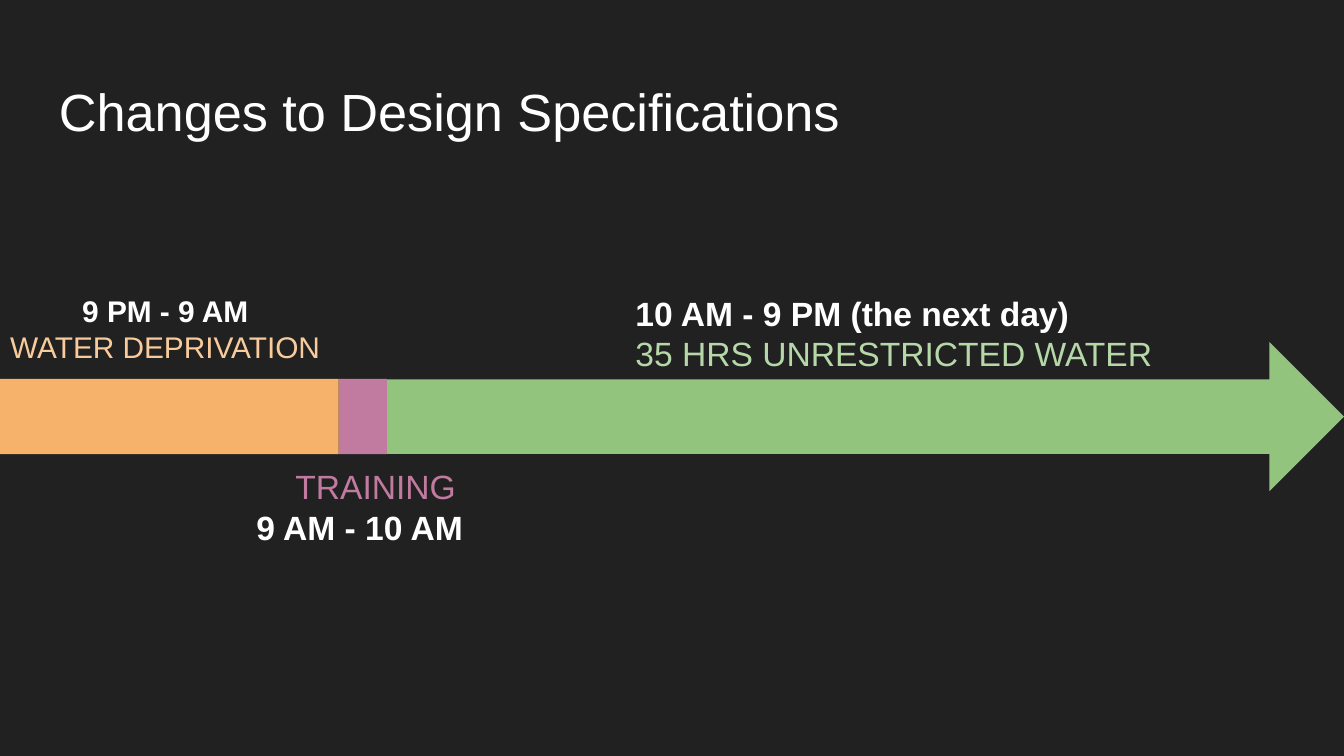
from pptx import Presentation
from pptx.dml.color import RGBColor
from pptx.enum.shapes import MSO_SHAPE
from pptx.enum.text import PP_ALIGN
from pptx.util import Inches, Pt

WHITE = "FFFFFF"
BACKGROUND = "212121"
FONT = "Arial"
SLIDE_WIDTH = 10
SLIDE_HEIGHT = SLIDE_WIDTH * 9 / 16
INSET = 0.1

# Timeline bars: shape, left, width, height, fill
BAR_MIDDLE = 3.1
ARROW = (MSO_SHAPE.RIGHT_ARROW, 2.87, 7.13, 1.11, "93C47D")
BLOCKS = [
    (MSO_SHAPE.RECTANGLE, 2.52, 0.36, 0.56, "C27BA0"),
    (MSO_SHAPE.RECTANGLE, 0, 2.52, 0.56, "F6B26B"),
]

# Texts: box (left, top, width, height), size, alignment,
# lines of (text, colour, bold, indent)
TITLE = ((0.34, 0.49, 9.32, 0.63), 28, PP_ALIGN.LEFT, [
    ("Changes to Design Specifications", WHITE, False, 0)])
LABELS = [
    ((-1.32, 2.08, 5.1, 0.83), 16, PP_ALIGN.CENTER, [
        ("9 PM - 9 AM", WHITE, True, 0),
        ("WATER DEPRIVATION", "F9CB9C", False, 0)]),
    ((1.46, 3.37, 2.46, 0.91), 18, PP_ALIGN.LEFT, [
        ("TRAINING", "C27BA0", False, 0.64),
        ("9 AM - 10 AM", WHITE, True, 0.35)]),
    ((4.63, 2.08, 5.17, 0.83), 18, PP_ALIGN.LEFT, [
        ("10 AM - 9 PM (the next day)", WHITE, True, 0),
        ("35 HRS UNRESTRICTED WATER", "B6D7A8", False, 0)]),
]


def colour(value):
    return RGBColor.from_string(value)


def add_text(slide, box, size, alignment, lines):
    frame = slide.shapes.add_textbox(*map(Inches, box)).text_frame
    frame.word_wrap = True
    frame.margin_left = frame.margin_right = Inches(INSET)
    frame.margin_top = frame.margin_bottom = Inches(INSET)
    for index, (text, text_colour, bold, indent) in enumerate(lines):
        paragraph = frame.add_paragraph() if index else frame.paragraphs[0]
        paragraph.alignment = alignment
        if indent:
            # python-pptx has no public left-indent property
            paragraph._p.get_or_add_pPr().set("marL", str(Inches(indent)))
        run = paragraph.add_run()
        run.text = text
        run.font.name = FONT
        run.font.size = Pt(size)
        run.font.bold = bold
        run.font.color.rgb = colour(text_colour)


def add_bar(slide, kind, left, width, height, fill):
    shape = slide.shapes.add_shape(
        kind, Inches(left), Inches(BAR_MIDDLE - height / 2),
        Inches(width), Inches(height))
    shape.shadow.inherit = False
    shape.fill.solid()
    shape.fill.fore_color.rgb = colour(fill)
    shape.line.fill.background()


def main():
    presentation = Presentation()
    presentation.slide_width = Inches(SLIDE_WIDTH)
    presentation.slide_height = Inches(SLIDE_HEIGHT)
    slide = presentation.slides.add_slide(presentation.slide_layouts[6])
    slide.background.fill.solid()
    slide.background.fill.fore_color.rgb = colour(BACKGROUND)

    add_text(slide, *TITLE)

    # Arrow, then its labels, then the coloured blocks in front
    add_bar(slide, *ARROW)
    for label in LABELS:
        add_text(slide, *label)
    for block in BLOCKS:
        add_bar(slide, *block)

    presentation.save("out.pptx")


if __name__ == "__main__":
    main()
